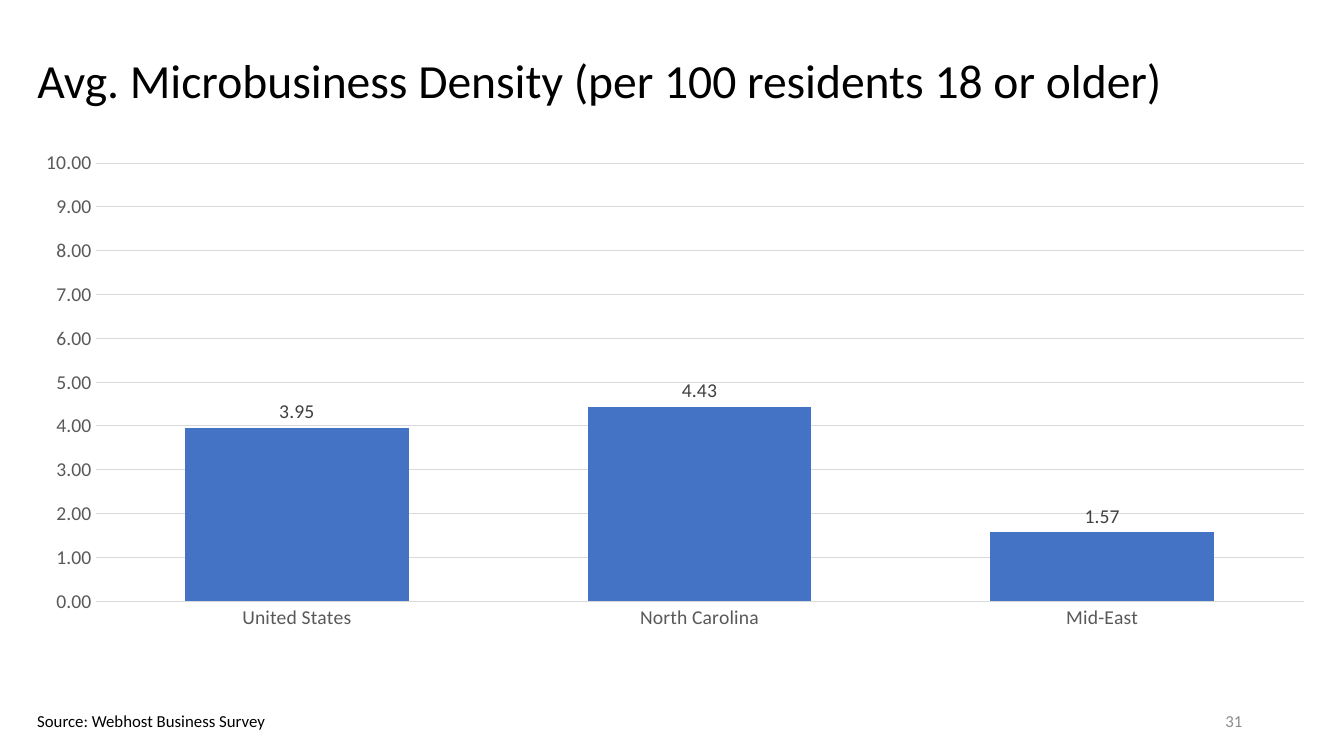
from dataclasses import dataclass

from lxml.etree import SubElement
from pptx import Presentation
from pptx.chart.data import CategoryChartData as ChartData
from pptx.dml.color import RGBColor as Rgb
from pptx.enum.chart import XL_CHART_TYPE as Kind, XL_LABEL_POSITION as Spot, XL_TICK_MARK as Tick
from pptx.enum.text import MSO_ANCHOR as Anchor, MSO_AUTO_SIZE as Fit, PP_ALIGN as Align
from pptx.oxml.ns import qn
from pptx.util import Pt

SCALE = 9144


@dataclass(frozen=True)
class Theme:
    face: str = "Calibri"
    ink: str = "000000"
    page: str = "8C8C8C"
    axis: str = "595959"
    label: str = "404040"
    grid: str = "D9D9D9"
    bar: str = "4472C4"
    head: int = 34
    body: int = 14
    small: int = 12
    rule: float = 0.75


THEME = Theme()
VALUES = {"United States": 3.95, "North Carolina": 4.43, "Mid-East": 1.57}
PLOT = {"x": 0.053, "y": 0.035, "w": 0.936, "h": 0.805}


def px(*nums):
    return [num * SCALE for num in nums]


def apply(item, vals):
    for name, val in vals.items():
        setattr(item, name, val)


def style(font, size, color):
    apply(font, {"name": THEME.face, "size": Pt(size), "bold": False})
    font.color.rgb = Rgb.from_string(color)


def rule(line):
    line.color.rgb = Rgb.from_string(THEME.grid)
    line.width = Pt(THEME.rule)


def write(frame, text, size, color, align, **vals):
    apply(frame, vals)
    para = frame.paragraphs[0]
    para.alignment = align
    run = para.add_run()
    run.text = text
    style(run.font, size, color)
    return para


def add_title(slide, text, box):
    title = slide.shapes.title
    apply(title, dict(zip(("left", "top", "width", "height"), px(*box))))
    para = write(title.text_frame, text, THEME.head, THEME.ink, Align.LEFT,
                 vertical_anchor=Anchor.MIDDLE, auto_size=Fit.NONE, word_wrap=True)
    para.line_spacing = 0.9


def add_note(slide, text, box, color, align, **vals):
    shape = slide.shapes.add_textbox(*px(*box))
    write(shape.text_frame, text, THEME.small, color, align, **vals)


def set_plot(chart):
    area = chart._chartSpace.chart.plotArea
    for old in area.findall(qn("c:layout")):
        area.remove(old)
    layout = SubElement(area, qn("c:layout"))
    area.insert(0, layout)
    manual = SubElement(layout, qn("c:manualLayout"))
    parts = {"layoutTarget": "inner", "xMode": "edge", "yMode": "edge", **PLOT}
    for name, val in parts.items():
        SubElement(manual, qn(f"c:{name}")).set("val", str(val))


def set_axes(chart):
    cats, vals = chart.category_axis, chart.value_axis
    for axis in (cats, vals):
        apply(axis, {"major_tick_mark": Tick.NONE, "minor_tick_mark": Tick.NONE})
        style(axis.tick_labels.font, THEME.body, THEME.axis)
    rule(cats.format.line)
    apply(vals, {"minimum_scale": 0, "maximum_scale": 10, "major_unit": 1,
                 "has_major_gridlines": True})
    apply(vals.tick_labels, {"number_format": "0.00", "number_format_is_linked": False})
    vals.format.line.fill.background()
    rule(vals.major_gridlines.format.line)


def add_bars(slide, box):
    data = ChartData(number_format="0.00")
    data.categories = list(VALUES)
    data.add_series("Series 1", list(VALUES.values()))
    chart = slide.shapes.add_chart(Kind.COLUMN_CLUSTERED, *px(*box), data).chart
    apply(chart, {"has_title": False, "has_legend": False})
    style(chart.font, THEME.body, THEME.ink)
    set_plot(chart)
    set_axes(chart)
    plot = chart.plots[0]
    apply(plot, {"gap_width": 80, "vary_by_categories": False})
    bars = plot.series[0]
    bars.format.fill.solid()
    bars.format.fill.fore_color.rgb = Rgb.from_string(THEME.bar)
    labels = bars.data_labels
    apply(labels, {"show_value": True, "position": Spot.OUTSIDE_END,
                   "number_format": "0.00", "number_format_is_linked": False})
    style(labels.font, THEME.body, THEME.label)


def main():
    deck = Presentation()
    apply(deck, dict(zip(("slide_width", "slide_height"), px(1333, 750))))
    slide = deck.slides.add_slide(deck.slide_layouts[5])
    add_title(slide, "Avg. Microbusiness Density (per 100 residents 18 or older)",
              (27, 20, 1276, 124))
    add_note(slide, "31", (942, 695, 300, 40), THEME.page, Align.RIGHT,
             vertical_anchor=Anchor.MIDDLE, word_wrap=True)
    add_note(slide, "Source: Webhost Business Survey", (27, 700, 265, 30), THEME.ink,
             Align.LEFT, word_wrap=False, auto_size=Fit.SHAPE_TO_FIT_TEXT)
    add_bars(slide, (27, 143, 1280, 540))
    deck.save("out.pptx")


if __name__ == "__main__":
    main()
